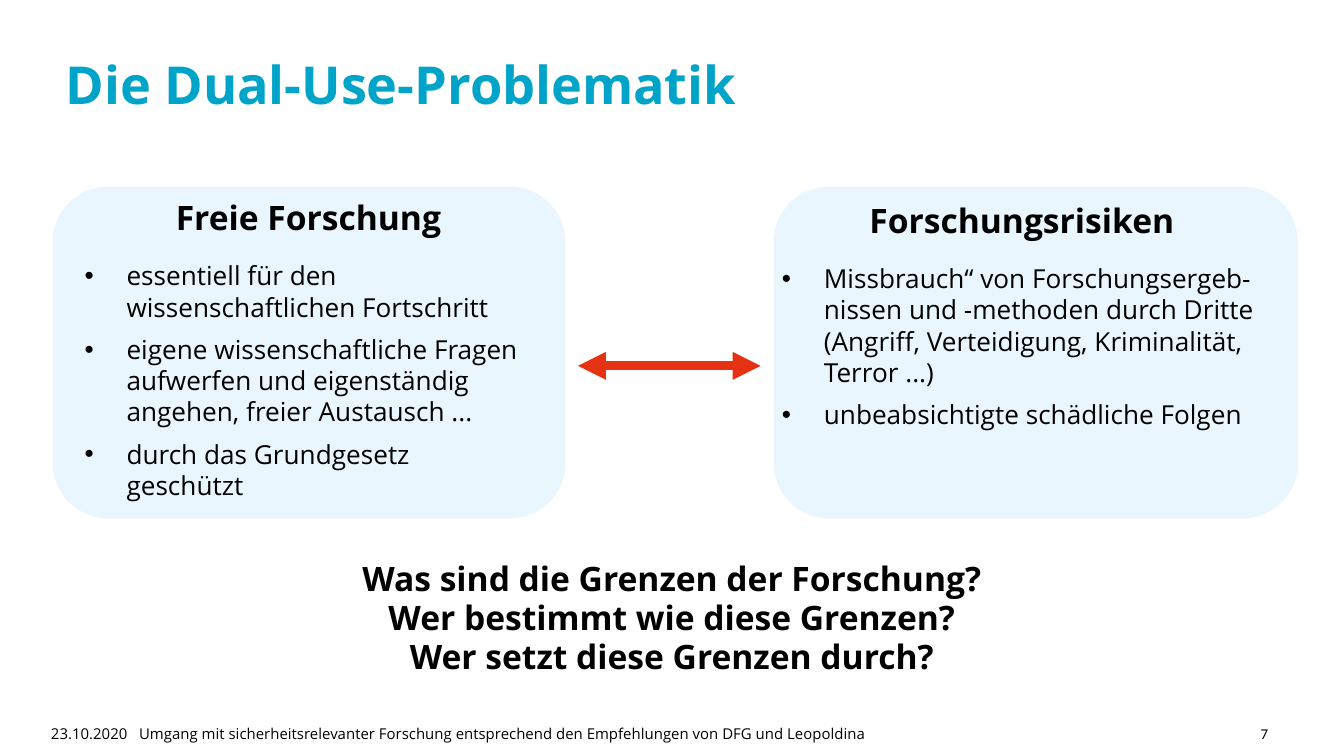
from lxml.etree import SubElement
from pptx import Presentation
from pptx.dml.color import RGBColor
from pptx.enum.shapes import MSO_CONNECTOR as CONN, MSO_SHAPE as SHAPE
from pptx.enum.text import MSO_ANCHOR as ANCHOR, MSO_AUTO_SIZE as AUTO, PP_ALIGN as ALIGN
from pptx.oxml.ns import qn
from pptx.util import Pt

BLACK = RGBColor(0x00, 0x00, 0x00)
CYAN = RGBColor(0x00, 0xA4, 0xC8)
PALE_BLUE = RGBColor(0xEA, 0xF6, 0xFE)
RED = RGBColor(0xE5, 0x32, 0x12)
FONT = "Open Sans"

FREEDOM = [
    "essentiell für den wissenschaftlichen Fortschritt",
    "eigene wissenschaftliche Fragen aufwerfen und eigenständig angehen, freier Austausch ...",
    "durch das Grundgesetz geschützt",
]
RISKS = [
    "Missbrauch“ von Forschungsergeb-nissen und -methoden durch Dritte "
    "(Angriff, Verteidigung, Kriminalität, Terror ...)",
    "unbeabsichtigte schädliche Folgen",
]
QUESTIONS = [
    "Was sind die Grenzen der Forschung?",
    "Wer bestimmt wie diese Grenzen?",
    "Wer setzt diese Grenzen durch?",
]
FOOTER = ("23.10.2020   Umgang mit sicherheitsrelevanter Forschung "
          "entsprechend den Empfehlungen von DFG und Leopoldina")


def add_box(s, x, y, w, h, auto=AUTO.SHAPE_TO_FIT_TEXT):
    """Add a wrapping text box and return its text frame."""
    tf = s.shapes.add_textbox(Pt(x), Pt(y), Pt(w), Pt(h)).text_frame
    tf.word_wrap = True
    tf.auto_size = auto
    return tf


def add_run(p, text, size, bold=False, color=BLACK, font=FONT):
    """Append a formatted run to a paragraph."""
    r = p.add_run()
    r.text = text
    r.font.size = Pt(size)
    r.font.bold = bold
    r.font.name = font
    r.font.color.rgb = color


def add_bullet(tf, text):
    """Append a bulleted paragraph with a hanging indent."""
    p = tf.add_paragraph()
    pPr = p._p.get_or_add_pPr()
    pPr.set("marL", str(Pt(22.5)))
    pPr.set("indent", str(-Pt(22.5)))
    SubElement(pPr, qn("a:buFont"), typeface="Arial")
    SubElement(pPr, qn("a:buChar"), char="•")
    p.line_spacing = Pt(16.7)
    p.space_after = Pt(6)
    add_run(p, text, 14)


def add_panel(s, x, w):
    """Add a pale rounded panel."""
    sp = s.shapes.add_shape(SHAPE.ROUNDED_RECTANGLE, Pt(x), Pt(100), Pt(w), Pt(177.8))
    sp.shadow.inherit = False
    sp.fill.solid()
    sp.fill.fore_color.rgb = PALE_BLUE
    sp.line.fill.background()


def add_topic(s, x, y, w, h, heading, bullets):
    """Add a centred heading with a bullet list below it."""
    tf = add_box(s, x, y, w, h)
    p = tf.paragraphs[0]
    p.alignment = ALIGN.CENTER
    p.space_after = Pt(12)
    add_run(p, heading, 18, bold=True)
    for text in bullets:
        add_bullet(tf, text)


def add_double_arrow(s, x1, x2, y):
    """Add a horizontal line with an arrowhead at each end."""
    line = s.shapes.add_connector(CONN.STRAIGHT, Pt(x1), Pt(y), Pt(x2), Pt(y))
    line.line.color.rgb = RED
    line.line.width = Pt(5)
    ln = line.line._get_or_add_ln()
    for end in ("a:headEnd", "a:tailEnd"):
        SubElement(ln, qn(end), type="triangle")
    SubElement(line._element.spPr, qn("a:effectLst"))


def add_title(s, text):
    """Add the slide title."""
    tf = add_box(s, 28, 10, 663, 71.5, AUTO.NONE)
    tf.vertical_anchor = ANCHOR.MIDDLE
    p = tf.paragraphs[0]
    p.line_spacing = Pt(32)
    add_run(p, text, 28, bold=True, color=CYAN)


def add_questions(s, questions):
    """Add the centred closing questions."""
    tf = add_box(s, 162.7, 299.5, 394.6, 72.7)
    tf.margin_left = tf.margin_right = tf.margin_top = tf.margin_bottom = 0
    for i, text in enumerate(questions):
        p = tf.add_paragraph() if i else tf.paragraphs[0]
        p.alignment = ALIGN.CENTER
        p.line_spacing = Pt(21)
        add_run(p, text, 18, bold=True)


def add_footer(s, text, number):
    """Add the footer line with the page number on a tab stop."""
    p = add_box(s, 20.2, 384.5, 699.8, 17.3).paragraphs[0]
    tabs = SubElement(p._p.get_or_add_pPr(), qn("a:tabLst"))
    SubElement(tabs, qn("a:tab"), pos=str(Pt(648)), algn="l")
    add_run(p, text + "\t", 8)
    add_run(p, number, 8, font="Calibri")


def main():
    """Build the slide and save it."""
    prs = Presentation()
    prs.slide_width, prs.slide_height = Pt(720), Pt(405)
    s = prs.slides.add_slide(prs.slide_layouts[6])
    add_footer(s, FOOTER, "7")
    add_title(s, "Die Dual-Use-Problematik")
    add_panel(s, 28.3, 274.6)
    add_double_arrow(s, 309.6, 407.5, 196)
    add_panel(s, 414.5, 280.8)
    add_topic(s, 38.2, 102.2, 254.2, 195, "Freie Forschung", FREEDOM)
    add_topic(s, 411.8, 103.7, 271.4, 154.8, "Forschungsrisiken", RISKS)
    add_questions(s, QUESTIONS)
    prs.save("out.pptx")


if __name__ == "__main__":
    main()
